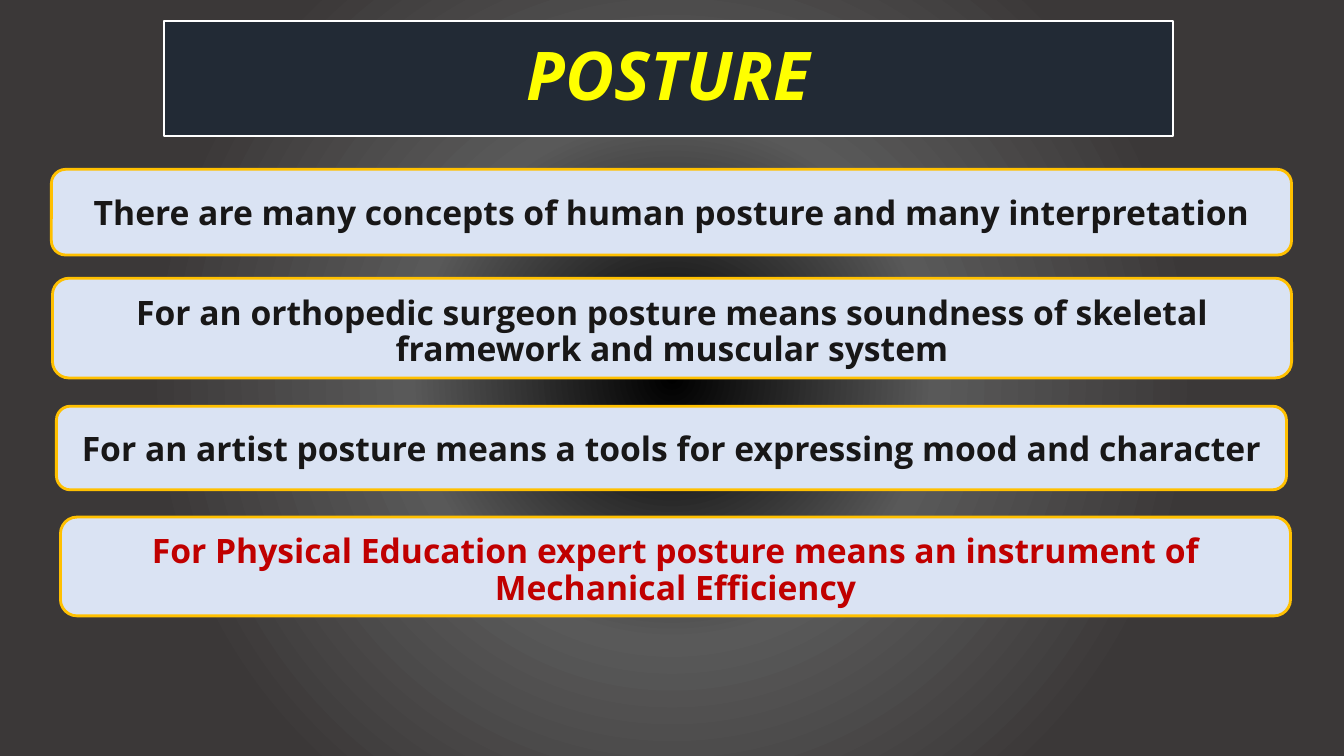
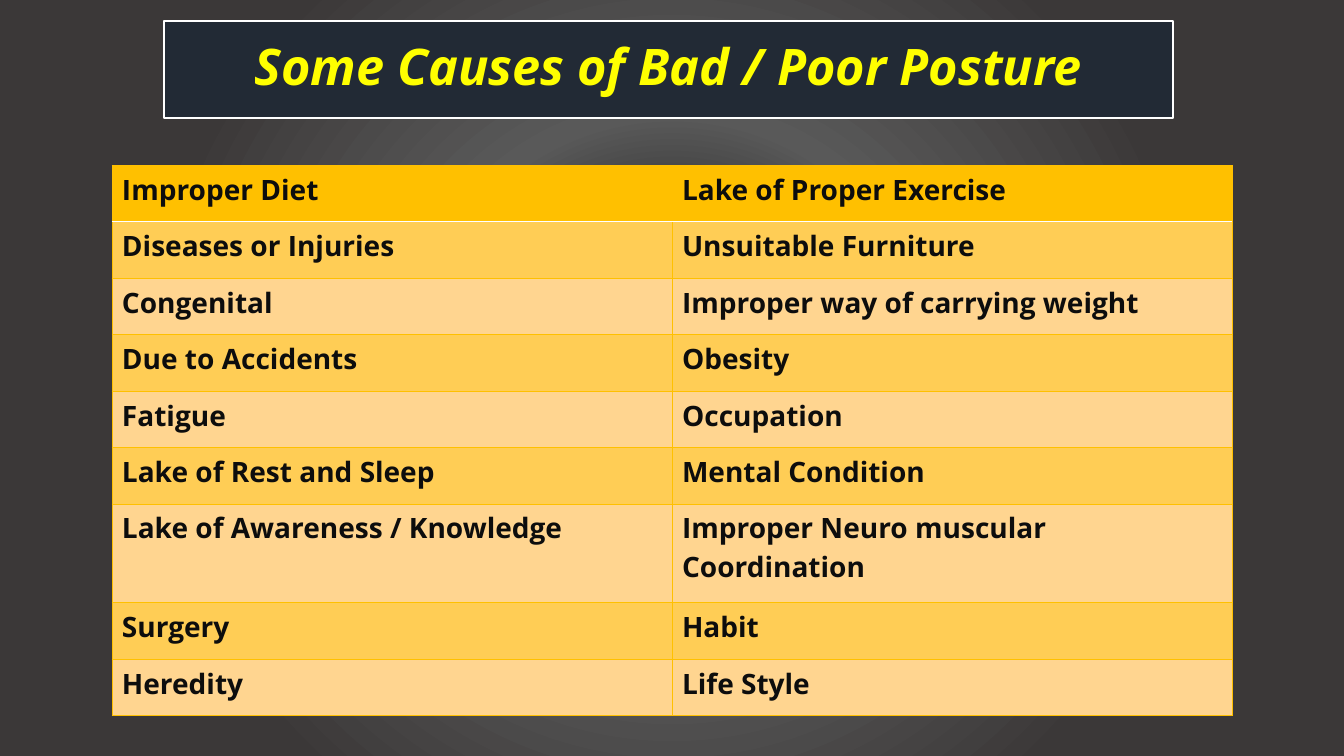
from dataclasses import dataclass

from lxml import etree
from pptx import Presentation
from pptx.dml.color import RGBColor
from pptx.enum import shapes, text
from pptx.oxml import ns
from pptx.util import Inches, Pt


@dataclass(frozen=True)
class Theme:
    """Colours, font and type sizes of the deck."""
    font: str = "Open Sans"
    title_fill: str = "222A35"
    title_ink: str = "FFFF00"
    white: str = "FFFFFF"
    gold: str = "FFC000"
    card: str = "DAE3F3"
    card_ink: str = "181717"
    accent: str = "C00000"
    table_ink: str = "0D0D0D"
    bands: tuple = ("FFCD55", "FFD590")
    backdrop: tuple = ((0, "000000"), (34, "595959"), (69, "3B3838"), (97, "3B3838"))
    title_size: int = 48
    long_title_size: int = 36
    card_size: int = 24
    table_size: int = 20


T = Theme()
CARDS = [
    ((0.51, 1.68, 12.3, 0.85), T.card_ink,
     "There are many concepts of human posture and many interpretation"),
    ((0.52, 2.76, 12.29, 0.99), T.card_ink,
     "For an orthopedic surgeon posture means soundness of skeletal framework and muscular system"),
    ((0.56, 4.03, 12.2, 0.83), T.card_ink,
     "For an artist posture means a tools for expressing mood and character"),
    ((0.6, 5.13, 12.2, 0.98), T.accent,
     "For Physical Education expert posture means an instrument of Mechanical Efficiency"),
]
CAUSES = [
    ("Improper Diet", "Lake of Proper Exercise"),
    ("Diseases or Injuries", "Unsuitable Furniture"),
    ("Congenital", "Improper way of carrying weight"),
    ("Due to Accidents", "Obesity"),
    ("Fatigue", "Occupation"),
    ("Lake of Rest and Sleep", "Mental Condition"),
    ("Lake of Awareness / Knowledge", "Improper Neuro muscular Coordination"),
    ("Surgery", "Habit"),
    ("Heredity", "Life Style"),
]
ROW_HEIGHT, TALL_ROW, TALL_HEIGHT = 0.56, 6, 0.98


def rgb(color):
    """Return a colour object for a hex string."""
    return RGBColor.from_string(color)


def write(tf, words, size, color, italic=False, align=text.PP_ALIGN.CENTER, spacing=None):
    """Write one bold paragraph into a text frame."""
    p = tf.paragraphs[0]
    p.alignment = align
    p.line_spacing = spacing
    r = p.add_run()
    r.text = words
    r.font.name, r.font.size = T.font, Pt(size)
    r.font.bold, r.font.italic = True, italic
    r.font.color.rgb = rgb(color)


def paint(sp, fill, line, width):
    """Give a shape a solid fill and an outline."""
    sp.fill.solid()
    sp.fill.fore_color.rgb = rgb(fill)
    sp.line.color.rgb = rgb(line)
    sp.line.width = Pt(width)


def set_backdrop(master):
    """Give the master a circular gradient background."""
    master.background.fill.gradient()
    grad = master.element.find(".//" + ns.qn("a:gradFill"))
    for child in list(grad):
        grad.remove(child)
    stops = etree.SubElement(grad, ns.qn("a:gsLst"))
    for position, color in T.backdrop:
        stop = etree.SubElement(stops, ns.qn("a:gs"), pos=str(position * 1000))
        etree.SubElement(stop, ns.qn("a:srgbClr"), val=color)
    circle = etree.SubElement(grad, ns.qn("a:path"), path="circle")
    etree.SubElement(circle, ns.qn("a:fillToRect"), {side: "50000" for side in "ltrb"})


def add_titled_slide(prs, words, size, height):
    """Add a slide with the framed title."""
    s = prs.slides.add_slide(prs.slide_layouts[5])
    sp = s.shapes.title
    sp.left, sp.top, sp.width, sp.height = map(Inches, (1.63, 0.21, 10, height))
    paint(sp, T.title_fill, T.white, 1.5)
    tf = sp.text_frame
    tf.auto_size = text.MSO_AUTO_SIZE.NONE
    tf.vertical_anchor = text.MSO_ANCHOR.MIDDLE
    tf.margin_left = tf.margin_right = tf.margin_top = tf.margin_bottom = Inches(0.2)
    write(tf, words, size, T.title_ink, italic=True, spacing=0.9)
    return s


def add_card(s, box, color, words):
    """Add a rounded statement card."""
    sp = s.shapes.add_shape(shapes.MSO_SHAPE.ROUNDED_RECTANGLE, *map(Inches, box))
    sp.shadow.inherit = False
    paint(sp, T.card, T.gold, 2)
    tf = sp.text_frame
    tf.word_wrap = True
    tf.auto_size = text.MSO_AUTO_SIZE.TEXT_TO_FIT_SHAPE
    tf.vertical_anchor = text.MSO_ANCHOR.MIDDLE
    write(tf, words, T.card_size, color)


def set_border(cell, side, color, width):
    """Draw one border of a cell; call in the order L, R, T, B before filling."""
    ln = etree.SubElement(cell._tc.get_or_add_tcPr(), ns.qn("a:ln" + side), w=str(Pt(width)))
    fill = etree.SubElement(ln, ns.qn("a:solidFill"))
    etree.SubElement(fill, ns.qn("a:srgbClr"), val=color)


def format_cell(cell, row, words):
    """Format one cell according to its row."""
    for side in "LRTB":
        rule = (row == 0 and side == "B") or (row == 1 and side == "T")
        set_border(cell, side, *((T.white, 1) if rule else (T.gold, 0.5)))
    cell.fill.solid()
    cell.fill.fore_color.rgb = rgb(T.bands[(row - 1) % 2] if row else T.gold)
    write(cell.text_frame, words, T.table_size, T.table_ink, align=text.PP_ALIGN.LEFT)


def add_causes_table(s, box, rows):
    """Add the two-column table of causes."""
    table = s.shapes.add_table(len(rows), len(rows[0]), *map(Inches, box)).table
    table.horz_banding = table.first_row = False
    for i, row in enumerate(rows):
        table.rows[i].height = Inches(TALL_HEIGHT if i == TALL_ROW else ROW_HEIGHT)
        for j, words in enumerate(row):
            format_cell(table.cell(i, j), i, words)


def main():
    """Build and save the deck."""
    prs = Presentation()
    prs.slide_width, prs.slide_height = Inches(13.33), Inches(7.5)
    set_backdrop(prs.slide_master)
    s = add_titled_slide(prs, "POSTURE", T.title_size, 1.14)
    for card in CARDS:
        add_card(s, *card)
    s = add_titled_slide(prs, "Some Causes of Bad / Poor Posture", T.long_title_size, 0.96)
    add_causes_table(s, (1.11, 1.64, 11.11, 5.49), CAUSES)
    prs.save("out.pptx")


if __name__ == "__main__":
    main()
